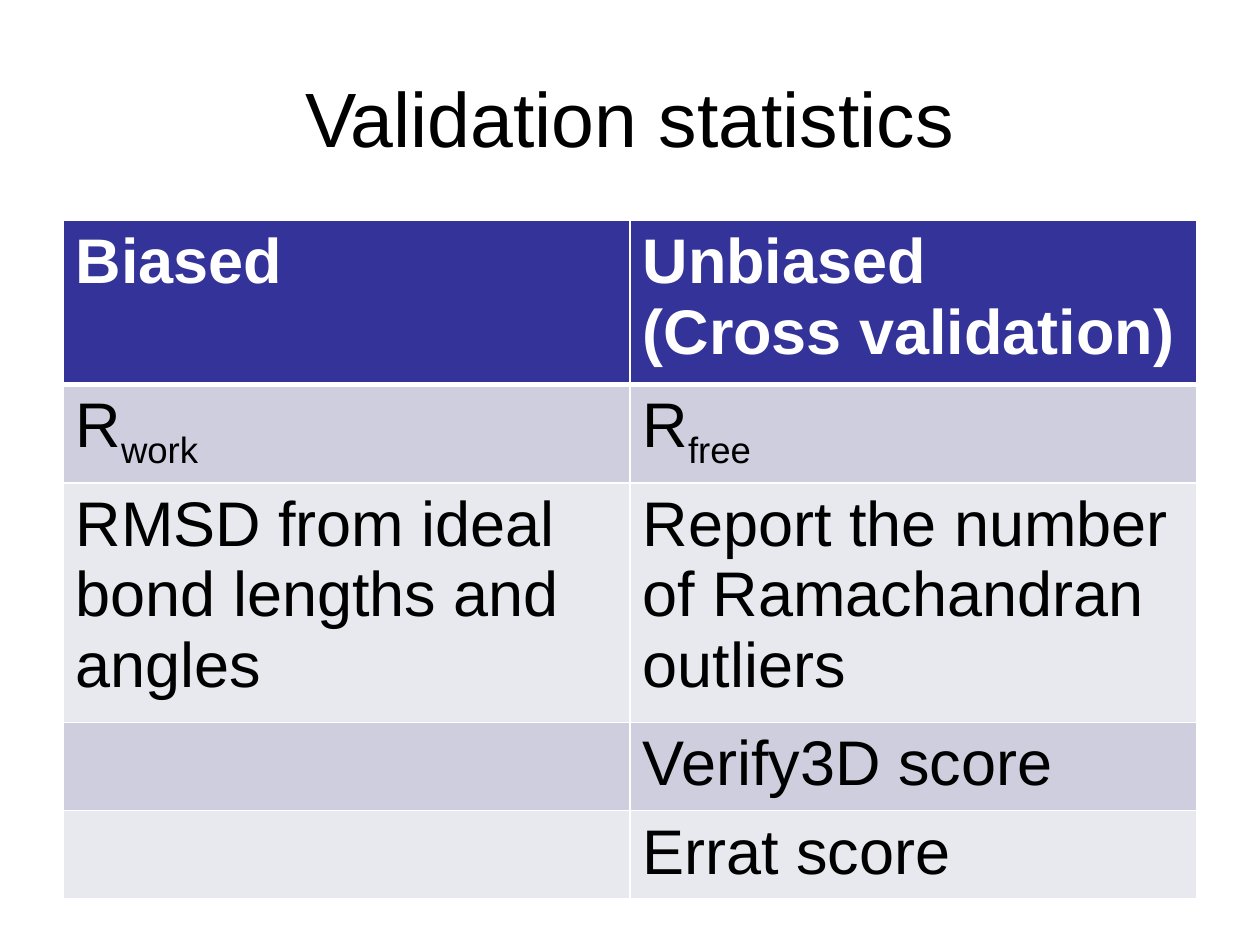
import dataclasses

import pptx
import pptx.dml.color
import pptx.enum.text
import pptx.oxml
import pptx.oxml.ns
import pptx.util
from pptx.util import Inches


@dataclasses.dataclass(frozen=True)
class Theme:
    font: str = "Arial"
    title_size: int = 44
    table_size: int = 36
    ink: str = "000000"
    white: str = "FFFFFF"
    header: str = "333399"
    bands: tuple = ("CECEDE", "E8E8EF")
    thin: int = 1
    thick: int = 3


THEME = Theme()

# Each cell is a list of paragraphs; each paragraph is a list of (text, is_subscript) runs.
ROWS = [
    ([[("Biased", False)]],
     [[("Unbiased", False)], [("(Cross validation)", False)]]),
    ([[("R", False), ("work", True)]],
     [[("R", False), ("free", True)]]),
    ([[("RMSD from ideal bond lengths and angles", False)]],
     [[("Report the number of Ramachandran outliers", False)]]),
    ([], [[("Verify3D score", False)]]),
    ([], [[("Errat score", False)]]),
]
ROW_HEIGHTS = [1.22, 0.74, 1.78, 0.66, 0.66]


def rgb(color):
    return pptx.dml.color.RGBColor.from_string(color)


def add_span(para, text, size, color, bold=False, subscript=False):
    span = para.add_run()
    span.text = text
    span.font.name = THEME.font
    span.font.size = pptx.util.Pt(size)
    span.font.color.rgb = rgb(color)
    span.font.bold = bold
    if subscript:
        span.font._element.set("baseline", "-25000")


def set_borders(cell, widths):
    """Draw white cell borders; widths maps L, R, T and B to points."""
    properties = cell._tc.get_or_add_tcPr()
    for index, (side, width) in enumerate(widths.items()):
        line = pptx.oxml.parse_xml(
            f'<a:ln{side} {pptx.oxml.ns.nsdecls("a")} w="{pptx.util.Pt(width)}">'
            f'<a:solidFill><a:srgbClr val="{THEME.white}"/></a:solidFill>'
            f'</a:ln{side}>')
        properties.insert(index, line)


def add_title(page, left, top, width, height):
    box = page.shapes.add_textbox(left, top, width, height)
    frame = box.text_frame
    frame.word_wrap = True
    frame.vertical_anchor = pptx.enum.text.MSO_ANCHOR.MIDDLE
    para = frame.paragraphs[0]
    para.alignment = pptx.enum.text.PP_ALIGN.CENTER
    add_span(para, "Validation statistics", THEME.title_size, THEME.ink)


def fill_cell(cell, paragraphs, row):
    is_header = row == 0
    cell.fill.solid()
    cell.fill.fore_color.rgb = rgb(
        THEME.header if is_header else THEME.bands[(row - 1) % 2])
    set_borders(cell, {
        "L": THEME.thin,
        "R": THEME.thin,
        "T": THEME.thick if row == 1 else THEME.thin,
        "B": THEME.thick if is_header else THEME.thin,
    })
    frame = cell.text_frame
    for index, spans in enumerate(paragraphs):
        para = frame.add_paragraph() if index else frame.paragraphs[0]
        for text, subscript in spans:
            add_span(para, text, THEME.table_size,
                     THEME.white if is_header else THEME.ink,
                     bold=is_header, subscript=subscript)


def add_statistics_table(page, left, top, width):
    columns = len(ROWS[0])
    table = page.shapes.add_table(
        len(ROWS), columns, left, top, width, Inches(sum(ROW_HEIGHTS))).table
    for column in table.columns:
        column.width = width // columns
    for row, (height, contents) in enumerate(zip(ROW_HEIGHTS, ROWS)):
        table.rows[row].height = Inches(height)
        for column, paragraphs in enumerate(contents):
            fill_cell(table.cell(row, column), paragraphs, row)


def main():
    deck = pptx.Presentation()
    deck.slide_width, deck.slide_height = Inches(10), Inches(7.5)
    page = deck.slides.add_slide(deck.slide_layouts[6])
    page.background.fill.solid()
    page.background.fill.fore_color.rgb = rgb(THEME.white)
    add_title(page, Inches(0.5), Inches(0.3), Inches(9), Inches(1.25))
    add_statistics_table(page, Inches(0.5), Inches(1.75), Inches(9))
    deck.save("out.pptx")


if __name__ == "__main__":
    main()
